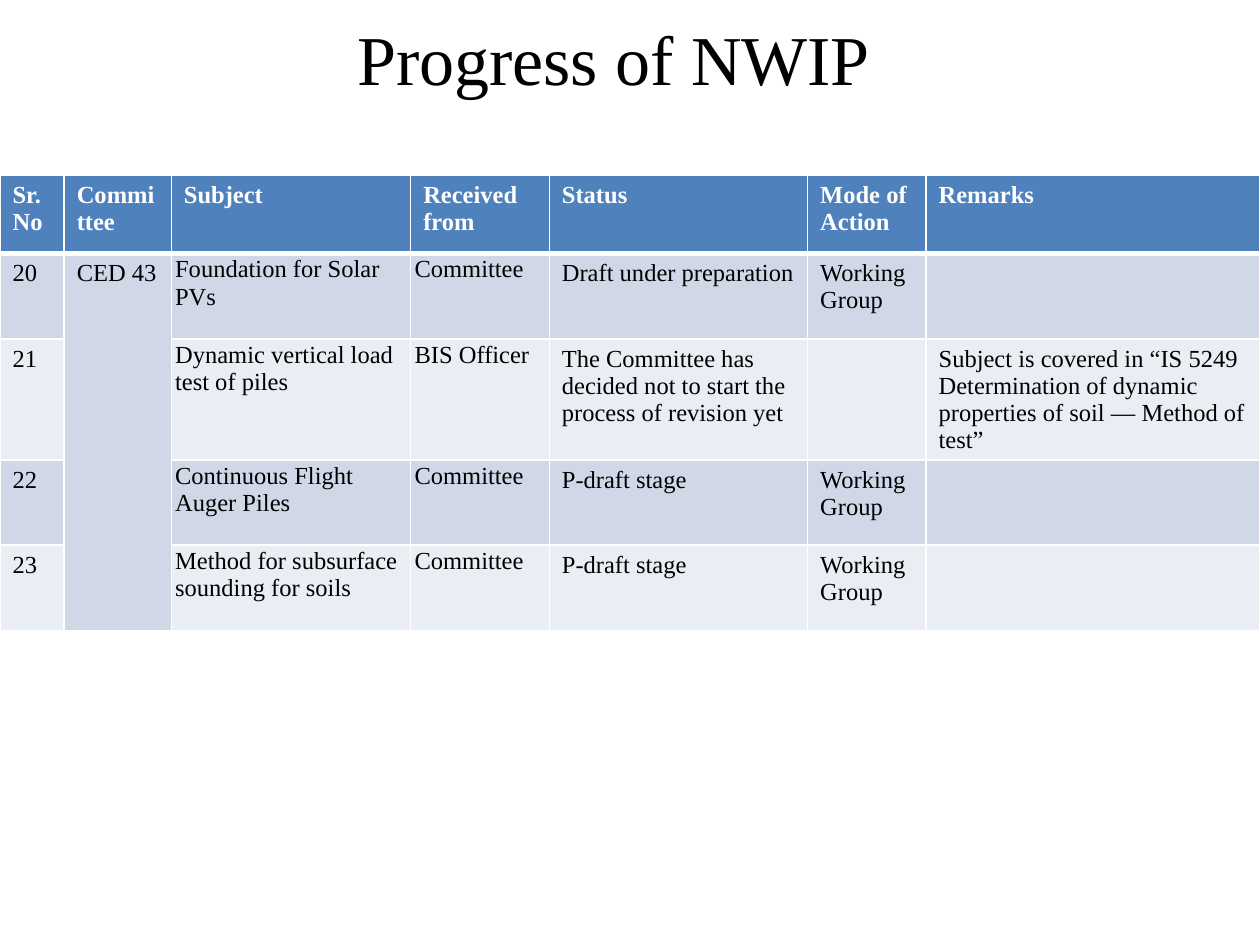
import pptx
import pptx.dml.color
import pptx.enum.text
import pptx.oxml
import pptx.oxml.ns
import pptx.util

Pt = pptx.util.Pt
FONT = "Times New Roman"
WHITE, BLACK, BLUE = "FFFFFF", "000000", "4F81BD"
BANDS = ("D0D8E8", "E9EDF4")

COLUMN_WIDTHS = (36.7, 61.2, 136.8, 79.2, 147.6, 67.7, 190.8)
HEADER_HEIGHT, ROW_HEIGHT = 45, 48.7
COMMITTEE_COLUMN = 1
TIGHT_COLUMNS = (2, 3)
TIGHT_MARGINS = {"margin_left": Pt(2.2), "margin_right": Pt(2.2),
                 "margin_top": Pt(1.4), "margin_bottom": Pt(1.4)}

HEADERS = ("Sr. No", "Committee", "Subject", "Received from", "Status",
           "Mode of Action", "Remarks")
ITEMS = (
    ("20", "CED 43", "Foundation for Solar PVs", "Committee",
     "Draft under preparation", "Working Group", ""),
    ("21", "", "Dynamic vertical load test of piles", "BIS Officer",
     "The Committee has decided not to start the process of revision yet", "",
     "Subject is covered in “IS 5249 Determination of dynamic properties "
     "of soil ― Method of test”"),
    ("22", "", "Continuous Flight Auger Piles", "Committee",
     "P-draft stage", "Working Group", ""),
    ("23", "", "Method for subsurface sounding for soils", "Committee",
     "P-draft stage", "Working Group", ""),
)


def color(value):
    return pptx.dml.color.RGBColor.from_string(value)


def set_attributes(target, values):
    for name, value in values.items():
        setattr(target, name, value)


def format_font(font, size, value, bold=False):
    set_attributes(font, {"name": FONT, "size": Pt(size), "bold": bold})
    font.color.rgb = color(value)


def add_borders(cell, bottom_width):
    """Give the cell white borders; they must come before its fill."""
    properties = cell._tc.get_or_add_tcPr()
    widths = {"lnL": 1, "lnR": 1, "lnT": 1, "lnB": bottom_width}
    for tag, width in widths.items():
        properties.append(pptx.oxml.parse_xml(
            f'<a:{tag} {pptx.oxml.ns.nsdecls("a")} w="{Pt(width)}">'
            f'<a:solidFill><a:srgbClr val="{WHITE}"/></a:solidFill></a:{tag}>'))


def fill_cell(cell, text, fill, text_color, bold=False, bottom_width=1):
    add_borders(cell, bottom_width)
    cell.fill.solid()
    cell.fill.fore_color.rgb = color(fill)
    paragraph = cell.text_frame.paragraphs[0]
    format_font(paragraph.font, 14, text_color, bold)
    if text:
        run = paragraph.add_run()
        run.text = text
        format_font(run.font, 14, text_color, bold)


def place_title(slide, left, top, width, height):
    title = slide.shapes.title
    set_attributes(title, {"left": Pt(left), "top": Pt(top),
                           "width": Pt(width), "height": Pt(height)})
    title.text_frame.text = "Progress of NWIP"
    title.text_frame.vertical_anchor = pptx.enum.text.MSO_ANCHOR.MIDDLE
    paragraph = title.text_frame.paragraphs[0]
    paragraph.alignment = pptx.enum.text.PP_ALIGN.CENTER
    format_font(paragraph.runs[0].font, 40, BLACK)


def add_progress_table(slide, left, top, width):
    height = HEADER_HEIGHT + ROW_HEIGHT * len(ITEMS)
    table = slide.shapes.add_table(
        len(ITEMS) + 1, len(HEADERS),
        Pt(left), Pt(top), Pt(width), Pt(height)).table
    for column, share in zip(table.columns, COLUMN_WIDTHS):
        column.width = Pt(width * share / sum(COLUMN_WIDTHS))
    for row in table.rows:
        row.height = Pt(ROW_HEIGHT)
    table.rows[0].height = Pt(HEADER_HEIGHT)

    for index, header in enumerate(HEADERS):
        fill_cell(table.cell(0, index), header, BLUE, WHITE,
                  bold=True, bottom_width=3)
    for row_index, item in enumerate(ITEMS, start=1):
        band = BANDS[(row_index - 1) % len(BANDS)]
        for index, text in enumerate(item):
            cell = table.cell(row_index, index)
            fill = BANDS[0] if index == COMMITTEE_COLUMN else band
            fill_cell(cell, text, fill, BLACK)
            if index in TIGHT_COLUMNS:
                set_attributes(cell, TIGHT_MARGINS)
    table.cell(1, COMMITTEE_COLUMN).merge(
        table.cell(len(ITEMS), COMMITTEE_COLUMN))


def main():
    presentation = pptx.Presentation()
    set_attributes(presentation, {"slide_width": Pt(720),
                                  "slide_height": Pt(540)})
    slide = presentation.slides.add_slide(presentation.slide_layouts[5])
    place_title(slide, 26.6, 0, 648, 66)
    add_progress_table(slide, 0, 100, 720)
    presentation.save("out.pptx")


if __name__ == "__main__":
    main()
